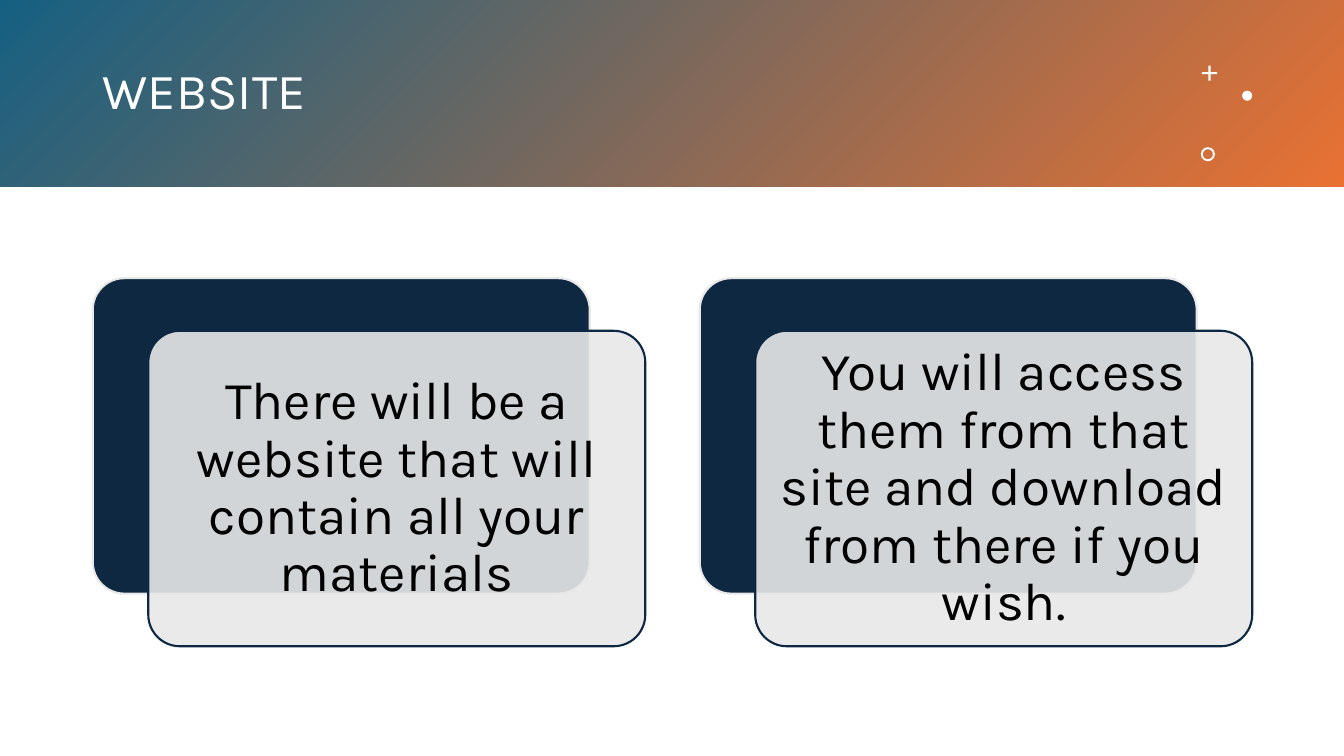
from dataclasses import dataclass

from lxml import etree
from pptx import Presentation
from pptx.dml.color import RGBColor
from pptx.enum.shapes import MSO_SHAPE
from pptx.enum.text import MSO_ANCHOR, MSO_AUTO_SIZE, PP_ALIGN
from pptx.oxml.ns import qn
from pptx.util import Emu, Inches, Pt

RECTANGLE = MSO_SHAPE.RECTANGLE
ROUNDED = MSO_SHAPE.ROUNDED_RECTANGLE
CROSS = MSO_SHAPE.CROSS
OVAL = MSO_SHAPE.OVAL
DONUT = MSO_SHAPE.DONUT
MIDDLE = MSO_ANCHOR.MIDDLE
NO_AUTOFIT = MSO_AUTO_SIZE.NONE
LEFT = PP_ALIGN.LEFT
CENTER = PP_ALIGN.CENTER

SLIDE_WIDTH = Inches(13.33)
SLIDE_HEIGHT = Inches(7.5)
FONT = "Karla"
WHITE = "FFFFFF"
BLACK = "000000"
NAVY = "0E2841"
PALE = "E8E8E8"
BLUE = "156082"
ORANGE = "E97132"
TITLE_LAYOUT = 5


@dataclass(frozen=True)
class Box:
    """Position and size as percentages of the slide."""

    left: float
    top: float
    width: float
    height: float

    def moved(self, right: float, down: float) -> "Box":
        return Box(self.left + right, self.top + down, self.width, self.height)

    def inset(self, across: float, down: float) -> "Box":
        return Box(self.left + across, self.top + down,
                   self.width - 2 * across, self.height - 2 * down)

    def lengths(self) -> tuple[Emu, Emu, Emu, Emu]:
        return (Emu(round(SLIDE_WIDTH * self.left / 100)),
                Emu(round(SLIDE_HEIGHT * self.top / 100)),
                Emu(round(SLIDE_WIDTH * self.width / 100)),
                Emu(round(SLIDE_HEIGHT * self.height / 100)))


@dataclass(frozen=True)
class Ornament:
    kind: MSO_SHAPE
    box: Box
    adjustment: float | None = None


BAND = Box(0, 0, 100, 24.67)
TITLE = Box(6.9, 4.4, 80.65, 15.87)
FIRST_CARD = Box(6.9, 36.8, 36.98, 41.73)
CARD_PITCH = 45.16
FRONT_SHIFT = (4.13, 6.96)
TEXT_INSET = (0.68, 1.2)
ORNAMENTS = (
    Ornament(CROSS, Box(89.42, 8.67, 1.13, 2), 0.43),
    Ornament(OVAL, Box(92.42, 12, 0.75, 1.33)),
    Ornament(DONUT, Box(89.35, 19.47, 1.05, 1.87), 0.14),
)
MESSAGES = (
    "There will be a website that will contain all your materials",
    "You will access them from that site and download from there if you wish.",
)


def color(value: str) -> RGBColor:
    return RGBColor.from_string(value)


def add_shape(slide, kind: MSO_SHAPE, box: Box, fill: str,
              line: str | None = None, adjustment: float | None = None):
    shape = slide.shapes.add_shape(kind, *box.lengths())
    shape.shadow.inherit = False
    shape.fill.solid()
    shape.fill.fore_color.rgb = color(fill)
    if line:
        shape.line.color.rgb = color(line)
        shape.line.width = Pt(1.5)
    else:
        shape.line.fill.background()
    if adjustment is not None:
        shape.adjustments[0] = adjustment
    return shape


def set_opacity(shape, percent: int) -> None:
    fill_color = shape.fill._xPr.find(qn("a:solidFill"))[0]
    alpha = etree.SubElement(fill_color, qn("a:alpha"))
    alpha.set("val", str(percent * 1000))


def write_text(shape, text: str, size: int, font_color: str,
               alignment: PP_ALIGN) -> None:
    frame = shape.text_frame
    frame.text = text
    frame.word_wrap = True
    frame.auto_size = NO_AUTOFIT
    frame.vertical_anchor = MIDDLE
    paragraph = frame.paragraphs[0]
    paragraph.alignment = alignment
    paragraph.line_spacing = 0.9
    font = paragraph.runs[0].font
    font.name = FONT
    font.size = Pt(size)
    font.color.rgb = color(font_color)


def add_band(slide) -> None:
    band = add_shape(slide, RECTANGLE, BAND, BLUE)
    band.fill.gradient()
    band.fill.gradient_angle = 315
    for stop, value in zip(band.fill.gradient_stops, (BLUE, ORANGE)):
        stop.color.rgb = color(value)
    slide.shapes.title._element.addprevious(band._element)


def add_title(slide, text: str) -> None:
    title = slide.shapes.title
    title.left, title.top, title.width, title.height = TITLE.lengths()
    write_text(title, text, 36, WHITE, LEFT)


def add_card(slide, back: Box, message: str) -> None:
    front = back.moved(*FRONT_SHIFT)
    add_shape(slide, ROUNDED, back, NAVY, PALE, 0.1)
    panel = add_shape(slide, ROUNDED, front, PALE, NAVY, 0.1)
    set_opacity(panel, 90)
    label = slide.shapes.add_textbox(*front.inset(*TEXT_INSET).lengths())
    write_text(label, message, 38, BLACK, CENTER)
    frame = label.text_frame
    frame.margin_left = frame.margin_right = Inches(0.16)
    frame.margin_top = frame.margin_bottom = Inches(0.16)


def main() -> None:
    presentation = Presentation()
    presentation.slide_width = SLIDE_WIDTH
    presentation.slide_height = SLIDE_HEIGHT
    slide = presentation.slides.add_slide(presentation.slide_layouts[TITLE_LAYOUT])
    add_band(slide)
    add_title(slide, "WEBSITE")
    for ornament in ORNAMENTS:
        add_shape(slide, ornament.kind, ornament.box, WHITE,
                  adjustment=ornament.adjustment)
    for index, message in enumerate(MESSAGES):
        add_card(slide, FIRST_CARD.moved(index * CARD_PITCH, 0), message)
    presentation.save("out.pptx")


if __name__ == "__main__":
    main()
